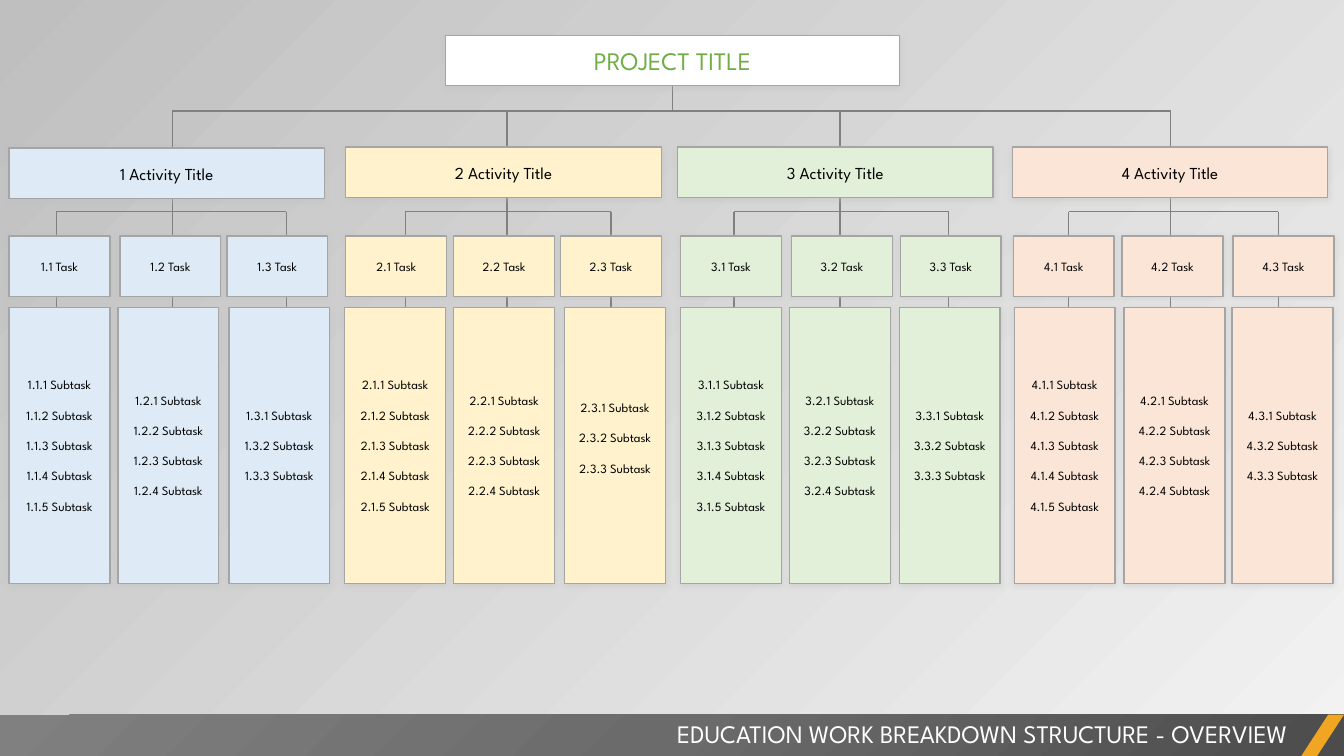
from pptx import Presentation
from pptx import oxml, util as u
from pptx.dml.color import RGBColor
from pptx.enum import shapes, text

NS = 'xmlns:a="http://schemas.openxmlformats.org/drawingml/2006/main"'


def rgb(value):
    return RGBColor.from_string(value)


class Chart:
    """Style and drawing methods for the breakdown structure."""
    FONT = "League Spartan"
    LINE, BORDER, SHADOW = "808080", "A5A5A5", "BFBFBF"

    def __init__(self, slide):
        self.slide = slide

    def background(self, start, end, angle):
        fill = self.slide.background.fill
        fill.gradient()
        fill.gradient_angle = angle
        for stop, color in zip(fill.gradient_stops, (start, end)):
            stop.color.rgb = rgb(color)

    def label(self, frame, lines, size, color, align, gap=0):
        frame.word_wrap = True
        frame.text = "\n".join(lines)
        for i, paragraph in enumerate(frame.paragraphs):
            paragraph.alignment = align
            paragraph.space_before = u.Pt(gap if i else 0)
            font = paragraph.runs[0].font
            font.name, font.size, font.color.rgb = self.FONT, u.Pt(size), rgb(color)

    def plain(self, kind, left, top, width, height, fill):
        shape = self.slide.shapes.add_shape(
            kind, u.Inches(left), u.Inches(top), u.Inches(width), u.Inches(height))
        shape.shadow.inherit = False
        shape.fill.solid()
        shape.fill.fore_color.rgb = rgb(fill)
        shape.line.fill.background()
        return shape

    def box(self, left, top, width, height, fill, lines, size, color="000000", gap=0):
        box = self.plain(shapes.MSO_SHAPE.RECTANGLE, left, top, width, height, fill)
        box.line.color.rgb = rgb(self.BORDER)
        box.line.width = u.Pt(1)
        box.element.spPr.find(oxml.ns.qn("a:effectLst")).append(oxml.parse_xml(
            f'<a:outerShdw {NS} blurRad="{u.Pt(4)}" dist="{u.Pt(1)}" dir="5400000" '
            f'algn="t" rotWithShape="0"><a:srgbClr val="{self.SHADOW}">'
            '<a:alpha val="40000"/></a:srgbClr></a:outerShdw>'))
        box.text_frame.vertical_anchor = text.MSO_ANCHOR.MIDDLE
        self.label(box.text_frame, lines, size, color, text.PP_ALIGN.CENTER, gap)
        return box

    def line(self, x1, y1, x2, y2):
        line = self.slide.shapes.add_connector(
            shapes.MSO_CONNECTOR.STRAIGHT, *map(u.Inches, (x1, y1, x2, y2)))
        line.line.color.rgb = rgb(self.LINE)
        line.line.width = u.Pt(1)
        line.element.spPr.append(oxml.parse_xml(f"<a:effectLst {NS}/>"))

    def band(self, top, height, colors):
        band = self.plain(shapes.MSO_SHAPE.RECTANGLE, 0, top, 13.33, height, colors[0])
        stops = "".join(
            f'<a:gs pos="{i * 100000 // (len(colors) - 1)}"><a:srgbClr val="{color}"/></a:gs>'
            for i, color in enumerate(colors))
        spPr = band.element.spPr
        spPr.replace(spPr.find(oxml.ns.qn("a:solidFill")), oxml.parse_xml(
            f'<a:gradFill {NS}><a:gsLst>{stops}</a:gsLst><a:path path="circle">'
            '<a:fillToRect l="100000" t="100000"/></a:path></a:gradFill>'))

    def title(self, left, top, width, height, words):
        title = self.slide.shapes.title
        title.left, title.top = u.Inches(left), u.Inches(top)
        title.width, title.height = u.Inches(width), u.Inches(height)
        title.text_frame.vertical_anchor = text.MSO_ANCHOR.TOP
        title.text_frame.auto_size = text.MSO_AUTO_SIZE.NONE
        self.label(title.text_frame, [words], 18, "FFFFFF", text.PP_ALIGN.RIGHT)
        self.slide.shapes.element.append(title.element)  # in front of the band


# Per activity: colour, box corner, task lefts, subtask lefts, branch positions
ACTIVITIES = [
    ("DEEBF7", (0.09, 1.47), (0.09, 1.19, 2.25), (0.09, 1.17, 2.27), (0.56, 1.71, 2.84)),
    ("FFF2CC", (3.43, 1.46), (3.43, 4.5, 5.56), (3.42, 4.5, 5.6), (4.02, 5.03, 6.06)),
    ("E2F0D9", (6.72, 1.46), (6.75, 7.85, 8.93), (6.75, 7.83, 8.92), (7.28, 8.33, 9.41)),
    ("FBE5D6", (10.04, 1.46), (10.05, 11.13, 12.23), (10.06, 11.15, 12.22),
     (10.6, 11.61, 12.68)),
]
SUBTASK_COUNTS = (5, 4, 3)
TRUNK_Y, BRANCH_Y, BRANCH_END = 1.1, 2.1, 3.33


def main():
    deck = Presentation()
    deck.slide_width, deck.slide_height = u.Inches(13.33), u.Inches(7.5)
    chart = Chart(deck.slides.add_slide(deck.slide_layouts[5]))
    chart.background("F2F2F2", "BFBFBF", 135)

    # Connecting lines, behind the boxes
    chart.line(6.67, 0.59, 6.67, TRUNK_Y)
    chart.line(ACTIVITIES[0][-1][1], TRUNK_Y, ACTIVITIES[-1][-1][1], TRUNK_Y)
    for *_, (first, middle, last) in ACTIVITIES:
        chart.line(first, BRANCH_Y, last, BRANCH_Y)
        chart.line(middle, TRUNK_Y, middle, BRANCH_END)
        for branch in (first, last):
            chart.line(branch, BRANCH_Y, branch, BRANCH_END)

    # Project, activities, tasks and subtasks
    chart.box(4.42, 0.35, 4.5, 0.5, "FFFFFF", ["PROJECT TITLE"], 18, "70AD47")
    for a, (color, corner, task_lefts, subtask_lefts, _) in enumerate(ACTIVITIES, 1):
        chart.box(*corner, 3.13, 0.5, color, [f"{a} Activity Title"], 12)
        columns = zip(task_lefts, subtask_lefts, SUBTASK_COUNTS)
        for t, (task_left, subtask_left, count) in enumerate(columns, 1):
            chart.box(task_left, 2.34, 1, 0.6, color, [f"{a}.{t} Task"], 9)
            subtasks = [f"{a}.{t}.{s} Subtask" for s in range(1, count + 1)]
            column = chart.box(subtask_left, 3.05, 1, 2.74, color, subtasks, 9, gap=10.8)
            if (a, t) == (2, 3):  # this list sits slightly higher
                column.text_frame.margin_bottom = u.Inches(0.2)

    # Footer band with the slide title
    chart.band(7.09, 0.42, ("4C4C4C", "6B6B6B", "808080"))
    accent = chart.plain(shapes.MSO_SHAPE.PARALLELOGRAM, 12.9, 7.09, 0.43, 0.42, "F0A622")
    accent.adjustments[0] = 0.65
    chart.title(5.25, 7.08, 7.62, 0.4, "EDUCATION WORK BREAKDOWN STRUCTURE - OVERVIEW")

    deck.save("out.pptx")


if __name__ == "__main__":
    main()
